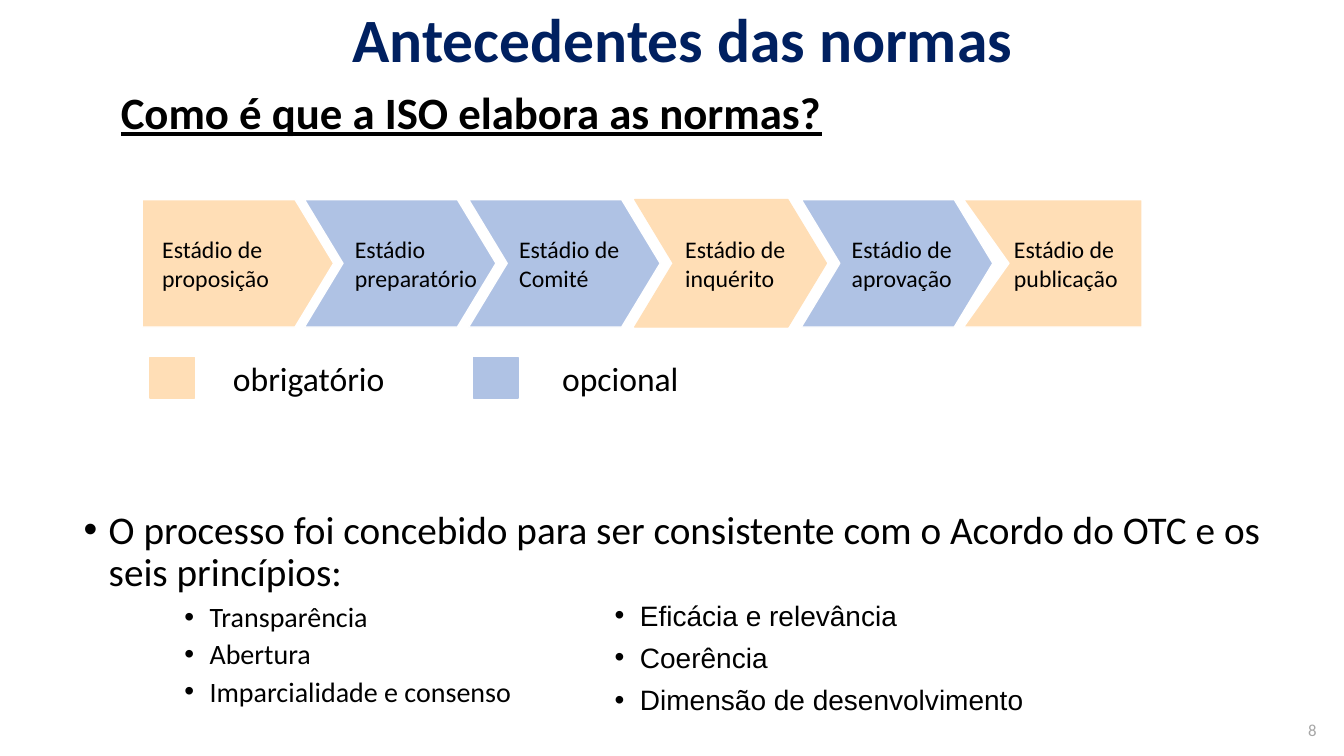
from dataclasses import dataclass

from pptx import Presentation
from pptx.dml.color import RGBColor as RGB
from pptx.enum.shapes import MSO_SHAPE as Shape
from pptx.enum.text import MSO_ANCHOR as Anchor, PP_ALIGN as Align
from pptx.oxml.ns import qn
from pptx.util import Pt


@dataclass(frozen=True)
class Theme:
    navy: RGB = RGB(0x00, 0x20, 0x60)
    black: RGB = RGB(0, 0, 0)
    grey: RGB = RGB(0xA6, 0xA6, 0xA6)
    white: RGB = RGB(0xFF, 0xFF, 0xFF)
    required: RGB = RGB(0xFF, 0xDE, 0xB6)
    optional: RGB = RGB(0xAF, 0xC2, 0xE4)
    font: str = "Calibri"
    alt_font: str = "Arial"
    title: int = 44
    heading: int = 32
    body: int = 28
    legend: int = 24
    bullet: int = 20
    stage: int = 17
    number: int = 12


T = Theme()


def write(tf, *lines, size, font=T.font, color=T.black, bold=False, underline=False,
          align=Align.LEFT, anchor=Anchor.TOP, spacing=1.0, before=0, after=0,
          indent=None):
    """Fill a text frame; indent is the bullet text's left margin in points."""
    tf.word_wrap = True
    tf.vertical_anchor = anchor
    for i, line in enumerate(lines):
        p = tf.add_paragraph() if i else tf.paragraphs[0]
        p.alignment, p.line_spacing = align, spacing
        p.space_before, p.space_after = Pt(before), Pt(after)
        if indent is not None:
            pPr = p._p.get_or_add_pPr()
            pPr.set("marL", str(Pt(indent)))
            pPr.set("indent", str(-Pt(18)))
            bullet_font = pPr.makeelement(qn("a:buFont"), {"typeface": "Arial"})
            pPr.append(bullet_font)
            pPr.append(pPr.makeelement(qn("a:buChar"), {"char": "•"}))
        r = p.add_run()
        r.text = line
        f = r.font
        f.name, f.size, f.color.rgb = font, Pt(size), color
        f.bold, f.underline = bold, underline


def add_text(s, x, y, w, h, *lines, **fmt):
    box = s.shapes.add_textbox(Pt(x), Pt(y), Pt(w), Pt(h))
    write(box.text_frame, *lines, **fmt)


def paint(sp, fill, line):
    sp.shadow.inherit = False
    sp.fill.solid()
    sp.fill.fore_color.rgb = fill
    sp.line.color.rgb = line
    sp.line.width = Pt(1)


def add_header(s, x, y, w, h):
    title = s.shapes.title
    title.left, title.top, title.width, title.height = Pt(x), Pt(y), Pt(w), Pt(h)
    write(title.text_frame, "Antecedentes das normas", size=T.title, color=T.navy,
          bold=True, align=Align.CENTER, anchor=Anchor.MIDDLE, spacing=0.9)
    add_text(s, 79.2, y + 58.3, 800, 44, "Como é que a ISO elabora as normas?",
             size=T.heading, bold=True, underline=True, spacing=0.9)


def add_stage(s, x, y, w, h, label, fill, line=T.white, notch=27.5, tip=27.5):
    """Arrow block with an optional notch on the left and tip on the right."""
    outline = [(x + w - tip, y), (x + w, y + h / 2), (x + w - tip, y + h), (x, y + h),
               (x + notch, y + h / 2)]
    builder = s.shapes.build_freeform(Pt(x), Pt(y), scale=1.0)
    builder.add_line_segments([(Pt(px), Pt(py)) for px, py in outline])
    sp = builder.convert_to_shape()
    paint(sp, fill, line)
    tf = sp.text_frame
    tf.margin_left, tf.margin_right = Pt(36 if notch else 14.4), Pt(7.2)
    tf.margin_top = tf.margin_bottom = Pt(11.5)
    write(tf, label, size=T.stage, anchor=Anchor.MIDDLE)


def add_process(s, x, y, w, h):
    stages = [
        (0, "Estádio de proposição", T.required, {"notch": 0}),
        (116, "Estádio preparatório", T.optional, {}),
        (233.3, "Estádio de Comité", T.optional, {}),
        (352, "Estádio de inquérito", T.required, {"line": T.required}),
        (470.9, "Estádio de aprovação", T.optional, {}),
        (586.8, "Estádio de publicação", T.required, {"notch": 32.4, "tip": 0}),
    ]
    for dx, label, fill, look in stages:
        add_stage(s, x + dx, y, min(136.8, w - dx), h, label, fill, **look)


def add_legend(s, x, y, w, h):
    entries = [(0, 52, "obrigatório", T.required), (w, 56, "opcional", T.optional)]
    for dx, gap, label, fill in entries:
        swatch = s.shapes.add_shape(Shape.RECTANGLE, Pt(x + dx), Pt(y), Pt(31.7), Pt(h))
        paint(swatch, fill, fill)
        add_text(s, x + dx + gap, y - 3.6, 132.5, 36, label, size=T.legend)


def add_principles(s, x, y, w, h):
    add_text(s, x, y, w, 70, "O processo foi concebido para ser consistente com o "
             "Acordo do OTC e os seis princípios:", size=T.body, spacing=0.9, indent=18)
    add_text(s, x, y + 66.5, 360, h - 66.5, "Transparência", "Abertura",
             "Imparcialidade e consenso", size=T.bullet, spacing=0.9, before=5, indent=90)
    add_text(s, x + 307.4, y + 63, 420, h - 63, "Eficácia e relevância", "Coerência",
             "Dimensão de desenvolvimento", size=T.bullet, font=T.alt_font, after=6,
             indent=90)


def main():
    prs = Presentation()
    prs.slide_width, prs.slide_height = Pt(960), Pt(540)
    s = prs.slides.add_slide(prs.slide_layouts[5])
    add_header(s, 95, 2.9, 785.5, 55.4)
    add_process(s, 101.5, 142.6, 714.3, 91)
    add_legend(s, 107.3, 255.6, 231.1, 28.8)
    add_principles(s, 52.6, 361, 895, 155)
    # Slide number
    add_text(s, 900, 510.5, 47.5, 21.6, "8", size=T.number, color=T.grey,
             align=Align.RIGHT, anchor=Anchor.MIDDLE)
    prs.save("out.pptx")


if __name__ == "__main__":
    main()
